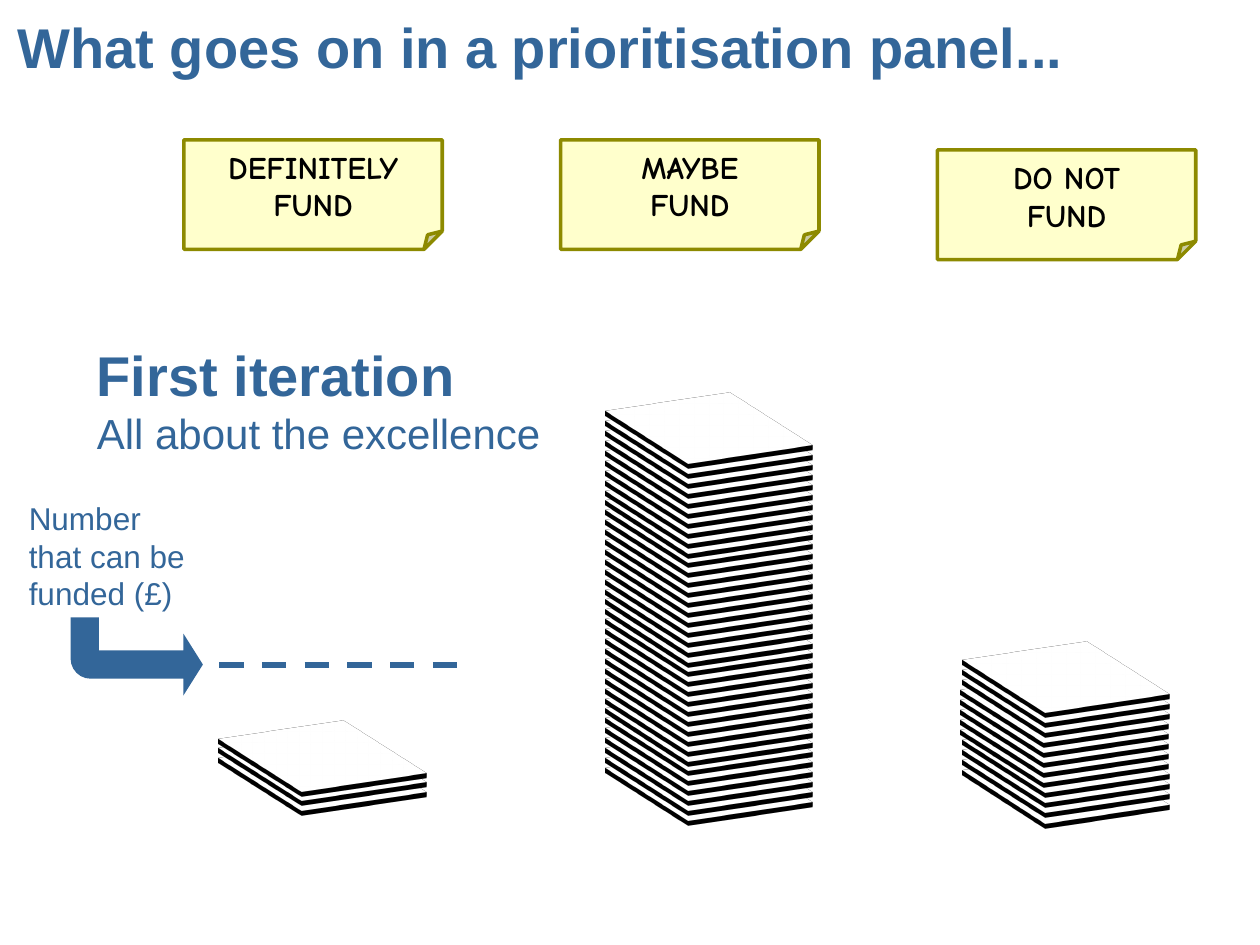
from lxml.etree import SubElement
from pptx import Presentation
from pptx.dml.color import RGBColor
from pptx.enum.dml import MSO_LINE
from pptx.enum.shapes import MSO_CONNECTOR, MSO_SHAPE
from pptx.enum.text import MSO_ANCHOR, PP_ALIGN
from pptx.oxml.ns import qn
from pptx.util import Inches, Pt

BLUE, BLACK, WHITE = "336699", "000000", "FFFFFF"
NOTE_FILL, NOTE_LINE = "FFFFCC", "8D8A00"
SHEET_WIDTH, SHEET_HEIGHT = 1.1, 1.5


def color(hex_value):
    return RGBColor.from_string(hex_value)


def box(left, top, width, height):
    return [Inches(value) for value in (left, top, width, height)]


def set_attributes(target, values):
    for name, value in values.items():
        setattr(target, name, value)


def write(frame, lines, frame_format, paragraph_format):
    """Fill a text frame with (text, size, bold, font, colour) lines."""
    set_attributes(frame, frame_format)
    for index, (text, size, bold, font, hex_value) in enumerate(lines):
        paragraph = frame.paragraphs[0] if index == 0 else frame.add_paragraph()
        set_attributes(paragraph, paragraph_format)
        run = paragraph.add_run()
        run.text = text
        set_attributes(run.font, {"size": Pt(size), "bold": bold, "name": font})
        run.font.color.rgb = color(hex_value)


def add_filled_shape(slide, kind, place, fill, line=None):
    shape = slide.shapes.add_shape(kind, *box(*place))
    shape.shadow.inherit = False
    shape.fill.solid()
    shape.fill.fore_color.rgb = color(fill)
    if line:
        shape.line.color.rgb = color(line)
        shape.line.width = Pt(2)
    else:
        shape.line.fill.background()
    return shape


def tilt(shape):
    """Lay a sheet flat in an off-axis view and give it some thickness."""
    properties = shape._element.spPr
    scene = SubElement(properties, qn("a:scene3d"))
    SubElement(scene, qn("a:camera"), prst="isometricOffAxis1Top")
    SubElement(scene, qn("a:lightRig"), rig="threePt", dir="t")
    SubElement(properties, qn("a:sp3d"), extrusionH=str(Pt(3)))


def add_stack(slide, left, bottom_top, top_top, count, nudged=()):
    """Pile up sheets evenly from the lowest position to the highest."""
    step = (bottom_top - top_top) / (count - 1)
    for index in range(count):
        sheet_left = left - 0.01 if index in nudged else left
        place = (sheet_left, bottom_top - index * step, SHEET_WIDTH, SHEET_HEIGHT)
        tilt(add_filled_shape(slide, MSO_SHAPE.RECTANGLE, place, WHITE, BLACK))


def add_note(slide, left, top, lines):
    note = add_filled_shape(slide, MSO_SHAPE.FOLDED_CORNER, (left, top, 2.05, 0.87),
                            NOTE_FILL, NOTE_LINE)
    write(note.text_frame, [(line, 18, True, "Comic Neue", BLACK) for line in lines],
          {"word_wrap": True, "vertical_anchor": MSO_ANCHOR.MIDDLE},
          {"alignment": PP_ALIGN.CENTER})
    note.text_frame.paragraphs[0].space_before = Pt(6)


def add_title(slide, place, text):
    title = slide.shapes.title
    set_attributes(title, dict(zip(("left", "top", "width", "height"), box(*place))))
    write(title.text_frame, [(text, 32, True, "Arial", BLUE)],
          {"word_wrap": True, "vertical_anchor": MSO_ANCHOR.TOP},
          {"alignment": PP_ALIGN.LEFT})


def add_label(slide, place, lines, wrap=True):
    label = slide.shapes.add_textbox(*box(*place))
    write(label.text_frame, [(*line, "Arial", BLUE) for line in lines],
          {"word_wrap": wrap}, {"alignment": PP_ALIGN.LEFT})


def add_funding_limit(slide, left, top):
    """Label, bent arrow and dashed line that mark how many can be funded."""
    add_label(slide, (left, top, 1.48, 1.01),
              [("Number that can be funded (£)", 18, False)])
    arrow = add_filled_shape(slide, MSO_SHAPE.BENT_ARROW,
                             (left + 0.43, top + 0.99, 1.05, 0.62), BLUE)
    arrow.rotation = 180
    arrow._element.spPr.xfrm.set("flipH", "1")
    for index, value in enumerate((0.363, 0.397, 0.25, 0.257)):
        arrow.adjustments[index] = value
    line_top = Inches(top + 1.37)
    limit = slide.shapes.add_connector(MSO_CONNECTOR.STRAIGHT, Inches(left + 1.61),
                                       line_top, Inches(left + 3.58), line_top)
    set_attributes(limit.line, {"width": Pt(3.5), "dash_style": MSO_LINE.DASH})
    limit.line.color.rgb = color(BLUE)
    SubElement(limit._element.spPr, qn("a:effectLst"))


def main():
    presentation = Presentation()
    set_attributes(presentation, {"slide_width": Inches(10), "slide_height": Inches(7.5)})
    slide = presentation.slides.add_slide(presentation.slide_layouts[5])

    add_stack(slide, 5.08, 5.48, 2.65, 37)
    add_stack(slide, 7.91, 5.5, 4.62, 12, nudged=range(4, 9))
    add_stack(slide, 2.01, 5.4, 5.25, 3)

    add_note(slide, 1.46, 1.11, ["DEFINITELY FUND"])
    add_note(slide, 4.45, 1.11, ["MAYBE", "FUND"])
    add_note(slide, 7.44, 1.19, ["DO NOT", "FUND"])

    add_title(slide, (0.04, 0.05, 9.88, 0.64), "What goes on in a prioritisation panel...")
    add_label(slide, (0.67, 2.65, 3.76, 1.04),
              [("First iteration", 32, True), ("All about the excellence", 24, False)],
              wrap=False)
    add_funding_limit(slide, 0.13, 3.91)
    presentation.save("out.pptx")


if __name__ == "__main__":
    main()
